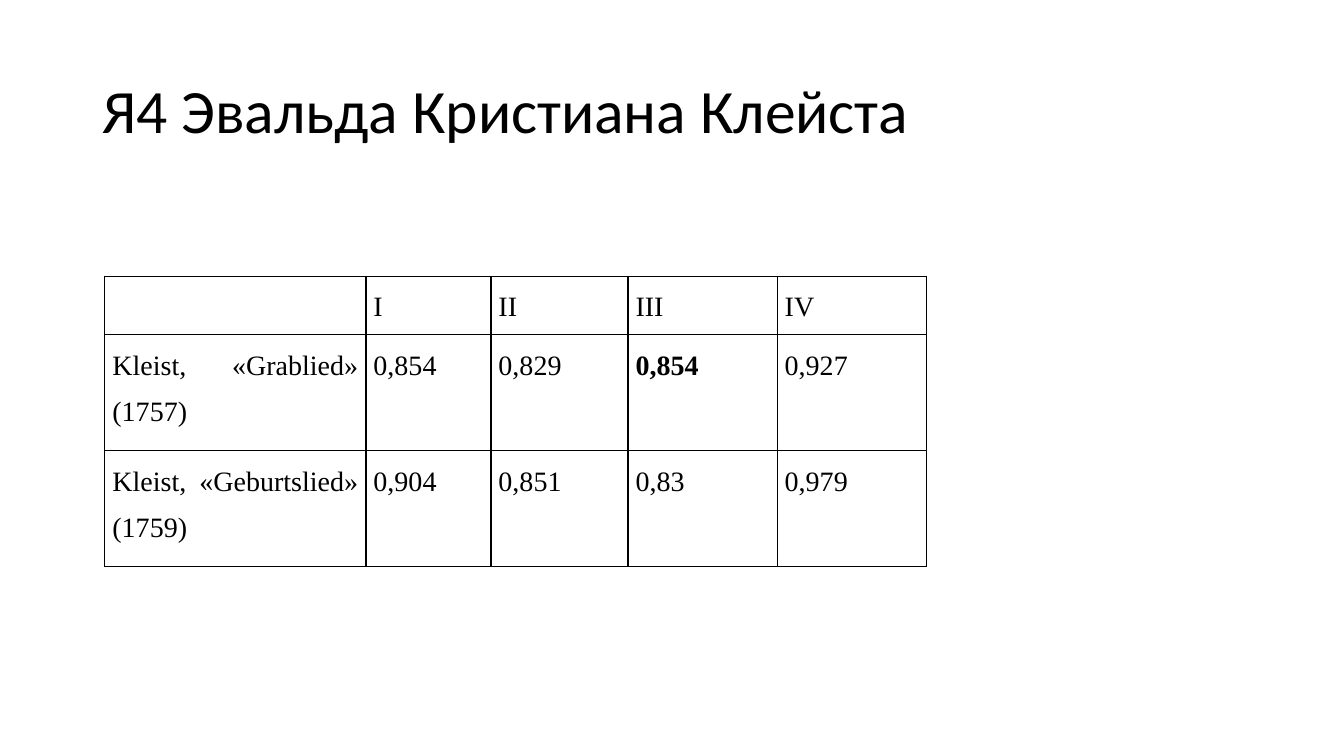
from lxml import etree
from pptx import Presentation
from pptx.dml.color import RGBColor
from pptx.enum.text import MSO_ANCHOR, PP_ALIGN
from pptx.oxml.ns import qn
from pptx.util import Pt

MIDDLE = MSO_ANCHOR.MIDDLE
JUSTIFY = PP_ALIGN.JUSTIFY
BLACK = "000000"
WHITE = "FFFFFF"
COLUMN_WIDTHS = [186.5, 89.3, 97.9, 106.6, 106.6]
ROW_HEIGHTS = [41.8, 82.8, 82.8]
ROWS = [
    ["", "I", "II", "III", "IV"],
    ["Kleist, «Grablied» (1757)", "0,854", "0,829", "0,854", "0,927"],
    ["Kleist, «Geburtslied» (1759)", "0,904", "0,851", "0,83", "0,979"],
]
BOLD_CELL = (1, 3)


def color(value):
    """Return the colour for a hex string."""
    return RGBColor.from_string(value)


def style_paragraph(paragraph, font_name, size, line_spacing):
    """Set the font and line spacing of a paragraph."""
    paragraph.line_spacing = line_spacing
    paragraph.font.name = font_name
    paragraph.font.size = Pt(size)
    paragraph.font.color.rgb = color(BLACK)


def add_title(slide, text):
    """Add the slide title."""
    shape = slide.shapes.add_textbox(Pt(66), Pt(28.8), Pt(828), Pt(104.4))
    frame = shape.text_frame
    frame.word_wrap = True
    frame.vertical_anchor = MIDDLE
    frame.text = text
    style_paragraph(frame.paragraphs[0], "Calibri", 44, 0.9)


def add_borders(cell):
    """Draw a thin black line on each side of a cell."""
    properties = cell._tc.get_or_add_tcPr()
    for side in ("a:lnL", "a:lnR", "a:lnT", "a:lnB"):
        line = etree.SubElement(properties, qn(side), w=str(Pt(1)))
        fill = etree.SubElement(line, qn("a:solidFill"))
        etree.SubElement(fill, qn("a:srgbClr"), val=BLACK)


def fill_cell(cell, text, bold):
    """Write and format one table cell."""
    cell.margin_left = cell.margin_right = Pt(5.4)
    cell.margin_top = cell.margin_bottom = Pt(0)
    add_borders(cell)
    cell.fill.solid()
    cell.fill.fore_color.rgb = color(WHITE)
    cell.text = text
    paragraph = cell.text_frame.paragraphs[0]
    paragraph.alignment = JUSTIFY
    style_paragraph(paragraph, "Times New Roman", 20, 1.5)
    paragraph.font.bold = bold


def add_stress_table(slide):
    """Add the table of values for the four feet."""
    table = slide.shapes.add_table(
        len(ROWS), len(COLUMN_WIDTHS), Pt(74.9), Pt(197.3),
        Pt(sum(COLUMN_WIDTHS)), Pt(sum(ROW_HEIGHTS))).table
    table.first_row = table.horz_banding = False
    for column, width in zip(table.columns, COLUMN_WIDTHS):
        column.width = Pt(width)
    for row, height in zip(table.rows, ROW_HEIGHTS):
        row.height = Pt(height)
    for row_index, texts in enumerate(ROWS):
        for column_index, text in enumerate(texts):
            position = (row_index, column_index)
            fill_cell(table.cell(*position), text, position == BOLD_CELL)


def main():
    """Build and save the presentation."""
    presentation = Presentation()
    presentation.slide_width = Pt(960)
    presentation.slide_height = Pt(540)
    slide = presentation.slides.add_slide(presentation.slide_layouts[6])
    add_title(slide, "Я4 Эвальда Кристиана Клейста")
    add_stress_table(slide)
    presentation.save("out.pptx")


if __name__ == "__main__":
    main()
